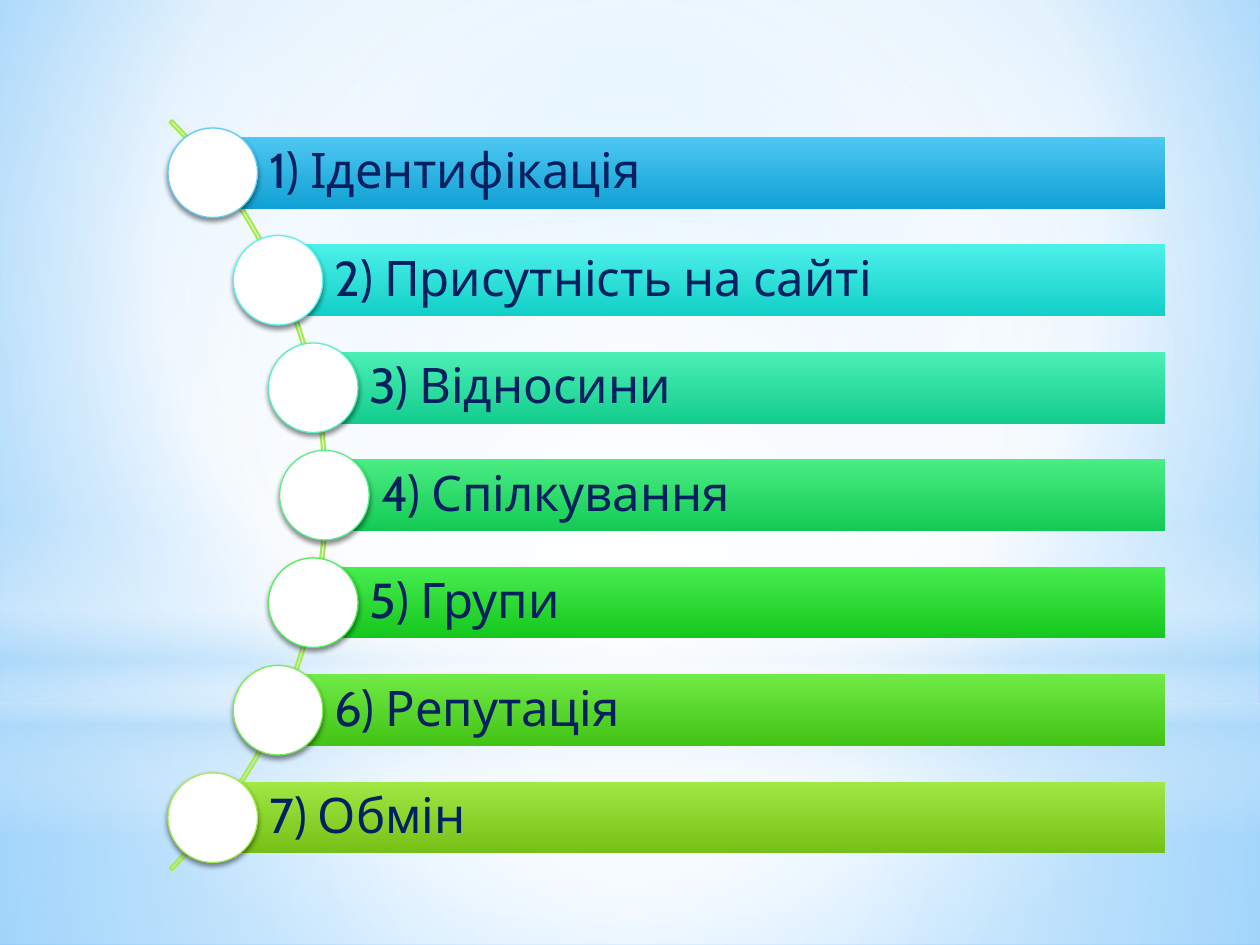
"""Build a slide listing seven functional blocks along an arc."""
from math import sqrt

from lxml.etree import SubElement
from pptx import Presentation
from pptx.dml.color import RGBColor
from pptx.enum.shapes import MSO_SHAPE
from pptx.enum.text import MSO_ANCHOR, PP_ALIGN
from pptx.oxml.ns import qn
from pptx.util import Pt

COLORS = {"white": "FFFFFF", "haze": "B4DCFA", "sky": "9ED5FF", "edge": "5BB9FF",
          "text": "002060", "arc": "A7EA52", "shadow": "000000"}
WHITE, HAZE = COLORS["white"], COLORS["haze"]
FONT = "Cabin"
WIDTH, HEIGHT = 720, 540
CENTER = (50, 50, 50, 50)

BACKGROUND = [(0, COLORS["sky"], 100), (60, WHITE, 100), (100, COLORS["edge"], 100)]
PANELS = [
    (MSO_SHAPE.RECTANGLE, 401.8, 138.2, [(0, WHITE, 91), (37, WHITE, 76), (100, HAZE, 79)], CENTER),
    (MSO_SHAPE.RECTANGLE, 0, 401.8, [(0, WHITE, 89), (48, WHITE, 62), (100, HAZE, 79)], CENTER),
    (MSO_SHAPE.RECTANGLE, 296.6, 180, [(0, WHITE, 0), (29, WHITE, 30), (45, HAZE, 40),
                                       (55, WHITE, 26), (65, HAZE, 60), (100, WHITE, 0)], None),
    (MSO_SHAPE.OVAL, 126, 401.8, [(0, WHITE, 100), (56, WHITE, 0)], CENTER),
]
ITEMS = [
    ("1) Ідентифікація", "4EC7F2", "11A1D4", "5ECCF3"),
    ("2) Присутність на сайті", "4CF0EA", "12D0C8", "5CF2EB"),
    ("3) Відносини", "4BEFB6", "13CD8D", "5AF0BC"),
    ("4) Спілкування", "49ED83", "14CA54", "58EF8D"),
    ("5) Групи", "47EC4F", "15C71D", "56ED5D"),
    ("6) Репутація", "70EA46", "42C315", "7BEC54"),
    ("7) Обмін", "A0E844", "75C016", "A7EA52"),
]

ARC_LEFT, ARC_TOP, ARC_SIZE = -419.2, -20.1, 606.2
PATH_X, PATH_RADIUS = -112.6, 298
MIDDLE, ROW_STEP = 283, 61.42
BAR_HEIGHT, BAR_RIGHT, DOT_SIZE = 41, 665.9, 51.2


def set_gradient(fill, root, stops, focus=None):
    fill.gradient()
    gradient = root.find(".//" + qn("a:gradFill"))
    for child in list(gradient):
        gradient.remove(child)
    stop_list = SubElement(gradient, qn("a:gsLst"))
    for position, color, opacity in stops:
        stop = SubElement(stop_list, qn("a:gs"), pos=str(position * 1000))
        tint = SubElement(stop, qn("a:srgbClr"), val=color)
        if opacity < 100:
            SubElement(tint, qn("a:alpha"), val=str(opacity * 1000))
    if focus:
        route = SubElement(gradient, qn("a:path"), path="circle")
        edges = {side: str(share * 1000) for side, share in zip("ltrb", focus)}
        SubElement(route, qn("a:fillToRect"), **edges)
    else:
        SubElement(gradient, qn("a:lin"), ang="5400000", scaled="0")


def add_shape(page, kind, left, top, width, height, fill=None, stops=None,
              focus=None, line=None, line_width=0.75):
    shape = page.shapes.add_shape(kind, Pt(left), Pt(top), Pt(width), Pt(height))
    shape.shadow.inherit = False
    if stops:
        set_gradient(shape.fill, shape.element.spPr, stops, focus)
    elif fill:
        shape.fill.solid()
        shape.fill.fore_color.rgb = RGBColor.from_string(fill)
    else:
        shape.fill.background()
    if line:
        shape.line.color.rgb = RGBColor.from_string(line)
        shape.line.width = Pt(line_width)
    else:
        shape.line.fill.background()
    return shape


def add_shadow(shape):
    effects = shape.element.spPr.find(qn("a:effectLst"))
    shadow = SubElement(effects, qn("a:outerShdw"), blurRad=str(Pt(3.1)), dist=str(Pt(1.8)),
                        dir="5400000", algn="ctr", rotWithShape="0")
    tint = SubElement(shadow, qn("a:srgbClr"), val=COLORS["shadow"])
    SubElement(tint, qn("a:alpha"), val="45000")


def write_text(box, text, size=28, color=COLORS["text"], indent=32.4, margin=5.6):
    frame = box.text_frame
    frame.word_wrap = True
    frame.vertical_anchor = MSO_ANCHOR.MIDDLE
    frame.margin_left = Pt(indent)
    frame.margin_top = frame.margin_right = frame.margin_bottom = Pt(margin)
    para = frame.paragraphs[0]
    para.alignment = PP_ALIGN.LEFT
    para.line_spacing = 0.9
    para.space_after = Pt(size * 0.35)
    span = para.add_run()
    span.text = text
    span.font.name = FONT
    span.font.size = Pt(size)
    span.font.color.rgb = RGBColor.from_string(color)


def main():
    deck = Presentation()
    deck.slide_width, deck.slide_height = Pt(WIDTH), Pt(HEIGHT)
    page = deck.slides.add_slide(deck.slide_layouts[6])
    set_gradient(page.background.fill, page.element, BACKGROUND, (20, 10, 20, 60))
    for kind, top, height, stops, focus in PANELS:
        add_shape(page, kind, 0, top, WIDTH, height, stops=stops, focus=focus)

    arc = add_shape(page, MSO_SHAPE.BLOCK_ARC, ARC_LEFT, ARC_TOP, ARC_SIZE, ARC_SIZE,
                    line=COLORS["arc"], line_width=1.25)
    for index, value in enumerate((189, 27, 0.003)):
        arc.adjustments[index] = value

    for row, (text, light, dark, outline) in enumerate(ITEMS):
        offset = (row - len(ITEMS) // 2) * ROW_STEP
        x = PATH_X + sqrt(PATH_RADIUS ** 2 - offset ** 2)
        y = MIDDLE + offset
        bar = add_shape(page, MSO_SHAPE.RECTANGLE, x, y - BAR_HEIGHT / 2, BAR_RIGHT - x,
                        BAR_HEIGHT, stops=[(0, light, 100), (100, dark, 100)])
        write_text(bar, text)
        dot = add_shape(page, MSO_SHAPE.OVAL, x - DOT_SIZE / 2, y - DOT_SIZE / 2,
                        DOT_SIZE, DOT_SIZE, fill=WHITE, line=outline)
        add_shadow(dot)
    deck.save("out.pptx")


if __name__ == "__main__":
    main()
